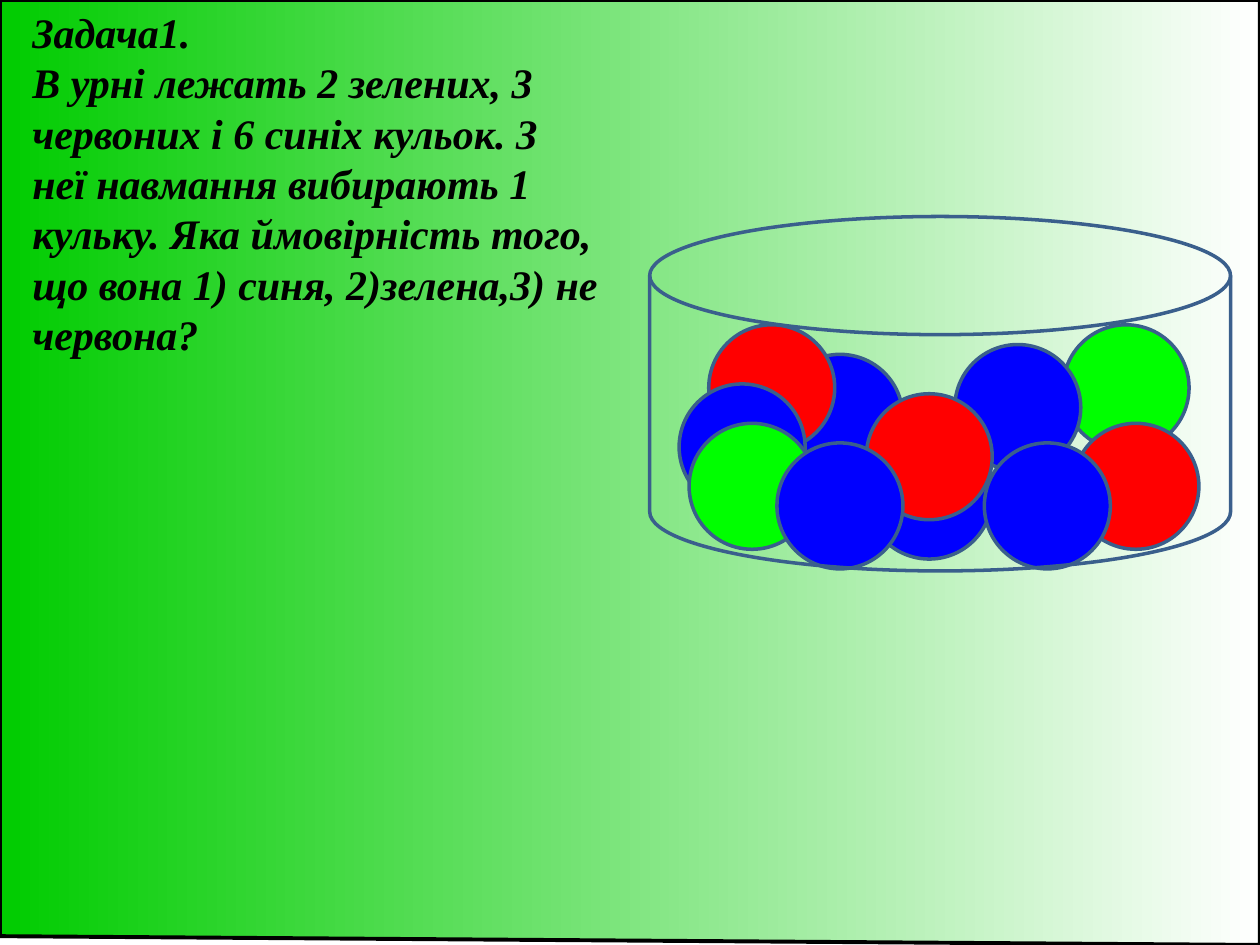
"""Builds a probability problem slide with an urn of coloured balls."""
import pptx
import pptx.dml.color
import pptx.enum.shapes
import pptx.enum.text
import pptx.util

Pt = pptx.util.Pt
RGB = pptx.dml.color.RGBColor
KIND = pptx.enum.shapes.MSO_SHAPE

BLACK = RGB(0, 0, 0)
WHITE = RGB(255, 255, 255)
LEAF = RGB(0, 204, 0)
RED = RGB(255, 0, 0)
GREEN = RGB(0, 255, 0)
BLUE = RGB(0, 0, 255)
EDGE = RGB(0x3A, 0x5F, 0x8C)

TEXT = [
    "Задача1.",
    "В урні лежать 2 зелених, 3 червоних і 6 синіх кульок. З неї навмання "
    "вибирають 1 кульку. Яка ймовірність того, що вона 1) синя, 2)зелена,3) "
    "не червона?",
]
WIDE, HIGH = 720, 540
FIELD = [(0, 0), (WIDE, 0), (WIDE, HIGH), (0, 535)]
SIZE = 72
BALLS = [
    (BLUE, 444, 202.5), (GREEN, 607.5, 185.6), (BLUE, 545.6, 196.9),
    (RED, 405, 185.6), (BLUE, 495, 247.5), (BLUE, 388.1, 219.4),
    (GREEN, 393.8, 241.9), (RED, 495, 225), (RED, 613.1, 241.9),
    (BLUE, 444, 253.1), (BLUE, 562.5, 253.1),
]
URN = (371.25, 123.75, 331.9, 202.5)


def add_field(slide):
    pen = slide.shapes.build_freeform(*FIELD[0], scale=Pt(1))
    pen.add_line_segments(FIELD[1:], close=True)
    field = pen.convert_to_shape()
    field.shadow.inherit = False
    field.fill.gradient()
    field.fill.gradient_angle = 0
    for stop, color, place in zip(field.fill.gradient_stops, (LEAF, WHITE), (0, 1)):
        stop.color.rgb = color
        stop.position = place
    field.line.color.rgb = BLACK
    field.line.width = Pt(2.25)


def add_part(slide, kind, box, color=None):
    part = slide.shapes.add_shape(kind, *map(Pt, box))
    part.shadow.inherit = False
    if color is None:
        part.fill.background()
    else:
        part.fill.solid()
        part.fill.fore_color.rgb = color
    part.line.color.rgb = EDGE
    part.line.width = Pt(2)


def set_text(slide):
    title = slide.shapes.title
    slide.shapes._spTree.append(title._element)
    title.left, title.top, title.width, title.height = map(Pt, (11.25, 0, 337.5, 240))
    frame = title.text_frame
    frame.text = "\n".join(TEXT)
    frame.word_wrap = True
    frame.auto_size = pptx.enum.text.MSO_AUTO_SIZE.NONE
    frame.vertical_anchor = pptx.enum.text.MSO_ANCHOR.TOP
    for line in frame.paragraphs:
        line.alignment = pptx.enum.text.PP_ALIGN.LEFT
        line.line_spacing = Pt(28.8)
        for run in line.runs:
            font = run.font
            font.name = "Times New Roman"
            font.size = Pt(24)
            font.bold = font.italic = True
            font.color.rgb = BLACK


def main():
    deck = pptx.Presentation()
    deck.slide_width, deck.slide_height = Pt(WIDE), Pt(HIGH)
    slide = deck.slides.add_slide(deck.slide_layouts[5])
    add_field(slide)
    for color, left, top in BALLS:
        add_part(slide, KIND.OVAL, (left, top, SIZE, SIZE), color)
    add_part(slide, KIND.FLOWCHART_MAGNETIC_DISK, URN)
    set_text(slide)
    deck.save("out.pptx")


if __name__ == "__main__":
    main()
